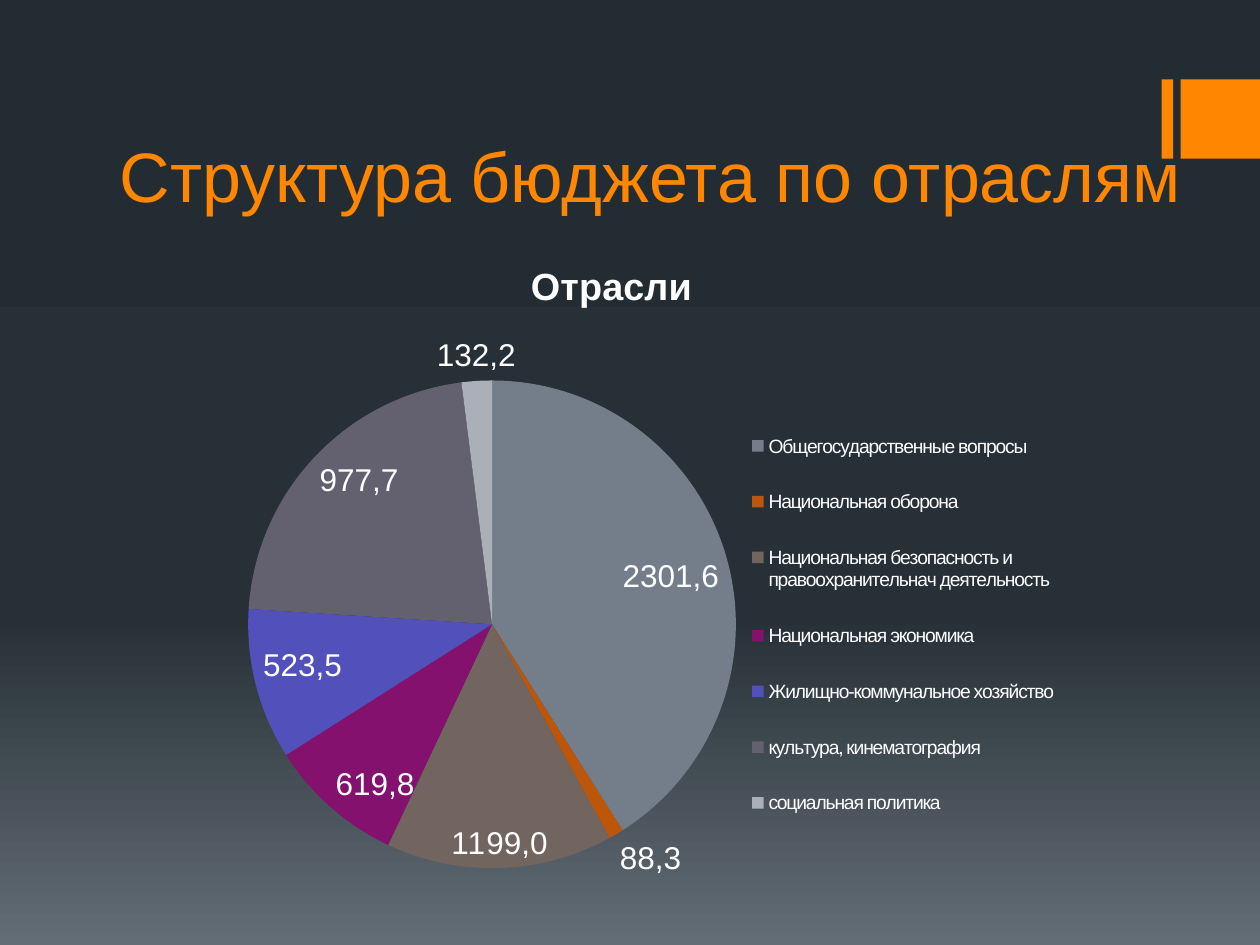
from collections import namedtuple
from copy import deepcopy

from pptx import Presentation
from pptx.chart.data import CategoryChartData
from pptx.dml.color import RGBColor
from pptx.enum.chart import XL_CHART_TYPE as ChartType
from pptx.enum.chart import XL_LABEL_POSITION as LabelPos
from pptx.enum.chart import XL_LEGEND_POSITION as LegendPos
from pptx.enum.shapes import MSO_SHAPE as Shape
from pptx.enum.text import MSO_ANCHOR as Anchor
from pptx.enum.text import PP_ALIGN as Align
from pptx.oxml import parse_xml
from pptx.oxml.ns import nsdecls
from pptx.util import Cm, Pt

Box = namedtuple("Box", "left top width height")
FONT = "Arial"
ORANGE = "FF8600"
WHITE = "FFFFFF"
GRADIENT = [(0, "242C33"), (0.65, "273037"), (1, "636D76")]
BRANCHES = [
    ("Общегосударственные вопросы", 41, "2301,6", "747E8A", LabelPos.INSIDE_END),
    ("Национальная оборона", 1, "88,3", "BB560A", LabelPos.OUTSIDE_END),
    ("Национальная безопасность и правоохранительнач деятельность",
     15, "1199,0", "726560", LabelPos.INSIDE_END),
    ("Национальная экономика", 9, "619,8", "84116E", LabelPos.INSIDE_END),
    ("Жилищно-коммунальное хозяйство", 10, "523,5", "5250BB", LabelPos.INSIDE_END),
    ("культура, кинематография", 22, "977,7", "63606F", LabelPos.INSIDE_END),
    ("социальная политика", 2, "132,2", "ABAFB8", LabelPos.OUTSIDE_END),
]


def color(code):
    """Turn a hex string into a colour."""
    return RGBColor.from_string(code)


def set_font(font, size, code, bold=False):
    """Style a font."""
    font.name = FONT
    font.size = Pt(size)
    font.bold = bold
    font.color.rgb = color(code)


def place(box):
    """Convert a box in centimetres to lengths."""
    return [Cm(value) for value in box]


def paint_background(page):
    """Fill the page with a vertical gradient of three stops."""
    fill = page.background.fill
    fill.gradient()
    fill.gradient_angle = 270
    stop_list = page._element.xpath(".//a:gsLst")[0]
    stop_list.append(deepcopy(stop_list[-1]))
    for stop, (position, code) in zip(fill.gradient_stops, GRADIENT):
        stop.position = position
        stop.color.rgb = color(code)


def add_corner_mark(page, box):
    """Draw a narrow bar and a square that fills the right end of the box."""
    side = box.height
    parts = [
        Box(box.left, box.top, 0.23, side),
        Box(box.left + box.width - side, box.top, side, side),
    ]
    for part in parts:
        block = page.shapes.add_shape(Shape.RECTANGLE, *place(part))
        block.shadow.inherit = False
        block.fill.solid()
        block.fill.fore_color.rgb = color(ORANGE)
        block.line.fill.background()


def add_title(page, box, text):
    """Write the page title at the bottom of the box."""
    frame = page.shapes.add_textbox(*place(box)).text_frame
    frame.word_wrap = True
    frame.vertical_anchor = Anchor.BOTTOM
    para = frame.paragraphs[0]
    para.alignment = Align.CENTER
    span = para.add_run()
    span.text = text
    set_font(span.font, 40, ORANGE)


def make_layout(x, y, w, h, inner=False):
    """Build a manual chart layout from fractions of the chart."""
    target = '<c:layoutTarget val="inner"/>' if inner else ""
    sizes = "".join(f'<c:{key} val="{value}"/>'
                    for key, value in zip("xywh", (x, y, w, h)))
    return parse_xml(
        f'<c:layout {nsdecls("c")}><c:manualLayout>{target}'
        f'<c:xMode val="edge"/><c:yMode val="edge"/>{sizes}'
        "</c:manualLayout></c:layout>")


def add_legend(chart):
    """Put a condensed legend to the right of the pie."""
    chart.has_legend = True
    legend = chart.legend
    legend.position = LegendPos.RIGHT
    legend.include_in_layout = False
    set_font(legend.font, 11, WHITE)
    element = legend._element
    element.xpath(".//a:defRPr")[0].set("spc", "-80")
    for old in element.xpath("c:layout"):
        element.remove(old)
    element.xpath("c:legendPos")[0].addnext(make_layout(0.64, 0.24, 0.33, 0.64))


def add_pie(page, box, title):
    """Draw the pie of budget branches with its title, labels and legend."""
    data = CategoryChartData()
    data.categories = [branch[0] for branch in BRANCHES]
    data.add_series(title, [branch[1] for branch in BRANCHES])
    chart = page.shapes.add_chart(ChartType.PIE, *place(box), data).chart
    set_font(chart.font, 18, WHITE)

    chart.has_title = True
    span = chart.chart_title.text_frame.paragraphs[0].add_run()
    span.text = title
    set_font(span.font, 21.6, WHITE, bold=True)

    plot = chart.plots[0]
    plot.vary_by_categories = True
    for index, (_, _, label, code, position) in enumerate(BRANCHES):
        point = plot.series[0].points[index]
        point.format.fill.solid()
        point.format.fill.fore_color.rgb = color(code)
        point.format.line.fill.background()
        span = point.data_label.text_frame.paragraphs[0].add_run()
        span.text = label
        set_font(span.font, 18, WHITE)
        point.data_label.position = position

    area = chart._chartSpace.xpath(".//c:plotArea")[0]
    for old in area.xpath("c:layout"):
        area.remove(old)
    area.insert(0, make_layout(0.12, 0.21, 0.51, 0.7, inner=True))
    add_legend(chart)


def main():
    """Build the deck and save it."""
    deck = Presentation()
    deck.slide_width = Cm(25.4)
    deck.slide_height = Cm(19.05)
    page = deck.slides.add_slide(deck.slide_layouts[6])
    paint_background(page)
    add_corner_mark(page, Box(23.42, 1.6, 1.98, 1.6))
    add_title(page, Box(2.11, 1.32, 22, 3.18), "Структура бюджета по отраслям")
    add_pie(page, Box(2.69, 4.72, 19.28, 14.05), "Отрасли")
    deck.save("out.pptx")


if __name__ == "__main__":
    main()
